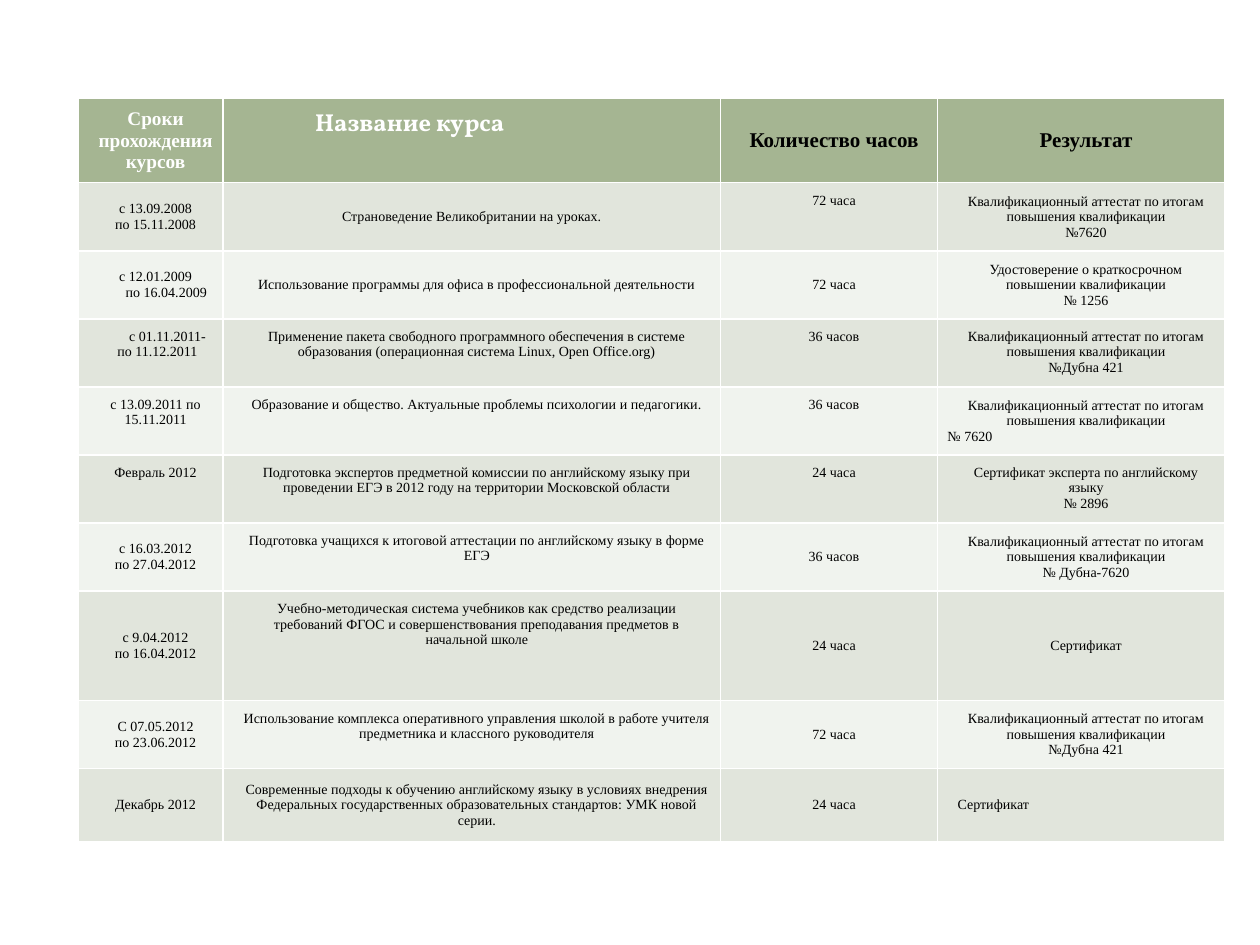
import pptx
import pptx.dml.color
import pptx.enum.text
import pptx.util

Inches = pptx.util.Inches
Pt = pptx.util.Pt
ALIGN = pptx.enum.text.PP_ALIGN
ANCHORS = {"t": pptx.enum.text.MSO_ANCHOR.TOP, "m": pptx.enum.text.MSO_ANCHOR.MIDDLE}

COL_WIDTHS = [1.15, 3.95, 1.72, 2.28]
ROW_HEIGHTS = [0.66] + [0.54] * 6 + [0.87, 0.54, 0.58]
HEADER_FILL = "A5B592"
BAND_FILLS = ["F0F3EE", "E1E5DC"]

# text, font, size, colour
HEADERS = [
    ("Сроки прохождения курсов", "Times New Roman", 11, "FFFFFF"),
    ("Название курса", "Vollkorn", 14, "FFFFFF"),
    ("Количество часов", "Times New Roman", 12, "000000"),
    ("Результат", "Times New Roman", 12, "000000"),
]

ATTESTAT = "Квалификационный аттестат по итогам повышения квалификации\n"

# vertical anchors of the four cells, then dates, course, hours, result
COURSES = [
    ("mmtm", "с 13.09.2008\nпо 15.11.2008", "Страноведение Великобритании на уроках.",
     "72 часа", ATTESTAT + "№7620"),
    ("mmmm", "с 12.01.2009\nпо 16.04.2009",
     "Использование программы для офиса в профессиональной деятельности",
     "72 часа", "Удостоверение о краткосрочном повышении квалификации\n№ 1256"),
    ("tttt", "с 01.11.2011-\nпо 11.12.2011",
     "Применение пакета свободного программного обеспечения в системе образования "
     "(операционная система Linux, Open Office.org)",
     "36 часов", ATTESTAT + "№Дубна 421"),
    ("tttm", "с 13.09.2011 по 15.11.2011",
     "Образование и общество. Актуальные проблемы психологии и педагогики.",
     "36 часов", ATTESTAT + "№ 7620"),
    ("tttt", "Февраль 2012",
     "Подготовка экспертов предметной комиссии по английскому языку при проведении ЕГЭ "
     "в 2012 году на территории Московской области",
     "24 часа", "Сертификат эксперта по английскому языку\n№ 2896"),
    ("mtmm", "с 16.03.2012\nпо 27.04.2012",
     "Подготовка учащихся к итоговой аттестации по английскому языку в форме ЕГЭ",
     "36 часов", ATTESTAT + "№ Дубна-7620"),
    ("mtmm", "с 9.04.2012\nпо 16.04.2012",
     "Учебно-методическая система учебников как средство реализации требований ФГОС "
     "и совершенствования преподавания предметов в начальной школе",
     "24 часа", "Сертификат"),
    ("mtmm", "С 07.05.2012\nпо 23.06.2012",
     "Использование комплекса оперативного управления школой в работе учителя "
     "предметника и классного руководителя",
     "72 часа", ATTESTAT + "№Дубна 421"),
    ("mmmm", "Декабрь 2012",
     "Современные подходы к обучению английскому языку в условиях внедрения Федеральных "
     "государственных образовательных стандартов: УМК новой серии.",
     "24 часа", "Сертификат"),
]

# (row, column, paragraph) of paragraphs that differ from the usual layout
INDENTS = {(0, 1, 0): 0.65, (1, 1, 0): 0, (2, 0, 1): 0.25, (3, 0, 0): 0.27,
           (3, 0, 1): 0.11, (4, 3, 1): 0}
LEFT_ALIGNED = {(0, 1, 0), (4, 3, 1), (9, 3, 0)}


def rgb(value):
    return pptx.dml.color.RGBColor.from_string(value)


class CourseSlide:
    font = "Times New Roman"
    size = 8
    color = "000000"
    inset = 0.08

    def __init__(self, prs):
        self.slide = prs.slides.add_slide(prs.slide_layouts[6])

    def table(self, left, top, widths, heights):
        frame = self.slide.shapes.add_table(
            len(heights), len(widths), Inches(left), Inches(top),
            Inches(sum(widths)), Inches(sum(heights)))
        table = frame.table
        for column, width in zip(table.columns, widths):
            column.width = Inches(width)
        for row, height in zip(table.rows, heights):
            row.height = Inches(height)
        return table

    def cell(self, table, row, col, text, fill, anchor="m", font=None, size=None,
             color=None, bold=False):
        cell = table.cell(row, col)
        cell.fill.solid()
        cell.fill.fore_color.rgb = rgb(fill)
        cell.vertical_anchor = ANCHORS[anchor]
        cell.margin_left = cell.margin_right = Inches(self.inset)
        cell.margin_top = cell.margin_bottom = Inches(self.inset)
        cell.text_frame.text = text
        for i, p in enumerate(cell.text_frame.paragraphs):
            key = (row, col, i)
            p.alignment = ALIGN.LEFT if key in LEFT_ALIGNED else ALIGN.CENTER
            pPr = p._p.get_or_add_pPr()
            pPr.set("marL", str(Inches(INDENTS.get(key, self.inset))))
            pPr.set("indent", "0")
            for r in p.runs:
                r.font.name = font or self.font
                r.font.size = Pt(size or self.size)
                r.font.bold = bold
                r.font.color.rgb = rgb(color or self.color)


def main():
    prs = pptx.Presentation()
    prs.slide_width, prs.slide_height = Inches(10), Inches(7.5)
    s = CourseSlide(prs)
    table = s.table(0.62, 0.78, COL_WIDTHS, ROW_HEIGHTS)
    for col, (text, font, size, color) in enumerate(HEADERS):
        s.cell(table, 0, col, text, HEADER_FILL, "t" if col == 1 else "m",
               font, size, color, bold=True)
    for row, (anchors, *texts) in enumerate(COURSES, start=1):
        for col, (text, anchor) in enumerate(zip(texts, anchors)):
            s.cell(table, row, col, text, BAND_FILLS[row % 2], anchor)
    prs.save("out.pptx")


if __name__ == "__main__":
    main()
